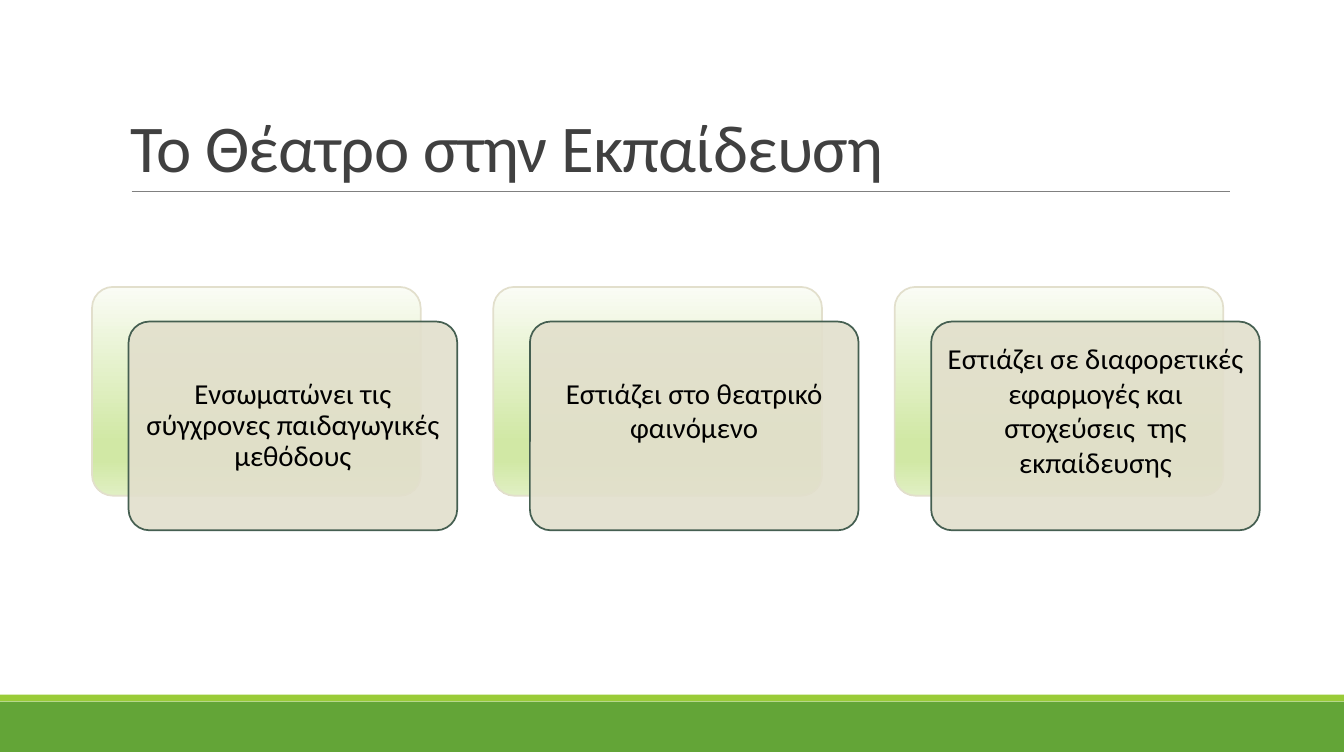
from dataclasses import dataclass

import lxml.etree
import pptx
import pptx.dml.color
import pptx.enum.shapes
import pptx.enum.text
import pptx.oxml.ns
import pptx.util

qn = pptx.oxml.ns.qn
SHAPES = pptx.enum.shapes.MSO_SHAPE
ANCHOR = pptx.enum.text.MSO_ANCHOR
ALIGN = pptx.enum.text.PP_ALIGN


@dataclass(frozen=True)
class Theme:
    font: str = "Calibri"
    title_size: float = 48.6
    card_size: float = 21
    title: str = "404040"
    text: str = "000000"
    rule: str = "808080"
    band: str = "63A537"
    stripe: str = "99CB38"
    card: str = "E2DFCC"
    card_edge: str = "455F51"
    card_alpha: int = 90
    backdrop: tuple = ((0, "FAFCF5"), (74, "D1E8A5"), (83, "D1E8A5"), (100, "E0EFC3"))


@dataclass(frozen=True)
class Area:
    """Left, top, width and height in percent of the slide."""
    left: float
    top: float
    width: float
    height: float

    def shifted(self, right: float, down: float = 0) -> "Area":
        return Area(self.left + right, self.top + down, self.width, self.height)


@dataclass(frozen=True)
class Card:
    text: str
    line_spacing: float = 1.0
    bottom_inset: float = 0.41


THEME = Theme()
FIRST_BACKDROP = Area(6.85, 38.16, 24.45, 27.76)
CARD_PITCH = 29.86
CARD_OFFSET = (2.72, 4.6)
CARDS = (
    Card("Ενσωματώνει τις σύγχρονες παιδαγωγικές μεθόδους", 0.9, 0.09),
    Card("Εστιάζει στο θεατρικό φαινόμενο"),
    Card("Εστιάζει σε διαφορετικές εφαρμογές και στοχεύσεις  της εκπαίδευσης"),
)

prs = pptx.Presentation()
prs.slide_width = pptx.util.Inches(13.58)
prs.slide_height = pptx.util.Inches(7.6)
slide = prs.slides.add_slide(prs.slide_layouts[6])


def across(share: float) -> int:
    return round(prs.slide_width * share / 100)


def down(share: float) -> int:
    return round(prs.slide_height * share / 100)


def place(area: Area) -> tuple[int, int, int, int]:
    return across(area.left), down(area.top), across(area.width), down(area.height)


def rgb(color: str) -> pptx.dml.color.RGBColor:
    return pptx.dml.color.RGBColor.from_string(color)


def add_panel(area: Area, fill: str | tuple, edge: str | None = None,
              alpha: int = 100, rounded: bool = False):
    """Draw a rectangle with a plain or a graded fill."""
    kind = SHAPES.ROUNDED_RECTANGLE if rounded else SHAPES.RECTANGLE
    panel = slide.shapes.add_shape(kind, *place(area))
    panel.shadow.inherit = False
    if rounded:
        panel.adjustments[0] = 0.1
    if isinstance(fill, str):
        panel.fill.solid()
        panel.fill.fore_color.rgb = rgb(fill)
        if alpha < 100:
            color = panel.fill._xPr.find(".//" + qn("a:srgbClr"))
            lxml.etree.SubElement(color, qn("a:alpha"), val=str(alpha * 1000))
    else:
        panel.fill.gradient()
        panel.fill.gradient_angle = 270
        stops = panel.fill._xPr.find(".//" + qn("a:gsLst"))
        for stop in list(stops):
            stops.remove(stop)
        for position, color in fill:
            stop = lxml.etree.SubElement(stops, qn("a:gs"), pos=str(position * 1000))
            lxml.etree.SubElement(stop, qn("a:srgbClr"), val=color)
    if edge:
        panel.line.color.rgb = rgb(edge)
        panel.line.width = pptx.util.Pt(1.25)
    else:
        panel.line.fill.background()
    return panel


def write(holder, text: str, *, size: float, color: str, anchor, align,
          line_spacing: float = 1.0, inset: float = 0.09,
          bottom_inset: float = 0.09, tracking: float = 0) -> None:
    """Set the text of a shape together with its format."""
    frame = holder.text_frame
    frame.word_wrap = True
    frame.vertical_anchor = anchor
    frame.margin_left = frame.margin_right = frame.margin_top = pptx.util.Inches(inset)
    frame.margin_bottom = pptx.util.Inches(bottom_inset)
    paragraph = frame.paragraphs[0]
    paragraph.alignment = align
    paragraph.line_spacing = line_spacing
    run = paragraph.add_run()
    run.text = text
    run.font.name = THEME.font
    run.font.size = pptx.util.Pt(size)
    run.font.color.rgb = rgb(color)
    if tracking:
        run.font._element.set("spc", str(round(tracking * 100)))


# Footer band
add_panel(Area(0, 93.29, 100, 6.71), THEME.band)
add_panel(Area(0, 92.37, 100, 0.92), THEME.stripe)

# Title and its rule
title_rule = slide.shapes.add_connector(
    pptx.enum.shapes.MSO_CONNECTOR.STRAIGHT,
    across(9.79), down(25.39), across(91.53), down(25.39))
title_rule.line.color.rgb = rgb(THEME.rule)
title_rule.line.width = pptx.util.Pt(0.5)
lxml.etree.SubElement(title_rule._element.spPr, qn("a:effectLst"))

title = slide.shapes.add_textbox(*place(Area(8.98, 4.21, 82.55, 21.18)))
write(title, "Το Θέατρο στην Εκπαίδευση", size=THEME.title_size, color=THEME.title,
      anchor=ANCHOR.BOTTOM, align=ALIGN.LEFT, line_spacing=0.85,
      inset=0.1, bottom_inset=0.05, tracking=-0.5)

# Cards, each in front of a graded backdrop
for column, card in enumerate(CARDS):
    backdrop = FIRST_BACKDROP.shifted(column * CARD_PITCH)
    add_panel(backdrop, THEME.backdrop, THEME.card, rounded=True)
    front = add_panel(backdrop.shifted(*CARD_OFFSET), THEME.card, THEME.card_edge,
                      alpha=THEME.card_alpha, rounded=True)
    write(front, card.text, size=THEME.card_size, color=THEME.text,
          anchor=ANCHOR.MIDDLE, align=ALIGN.CENTER,
          line_spacing=card.line_spacing, bottom_inset=card.bottom_inset)

prs.save("out.pptx")
